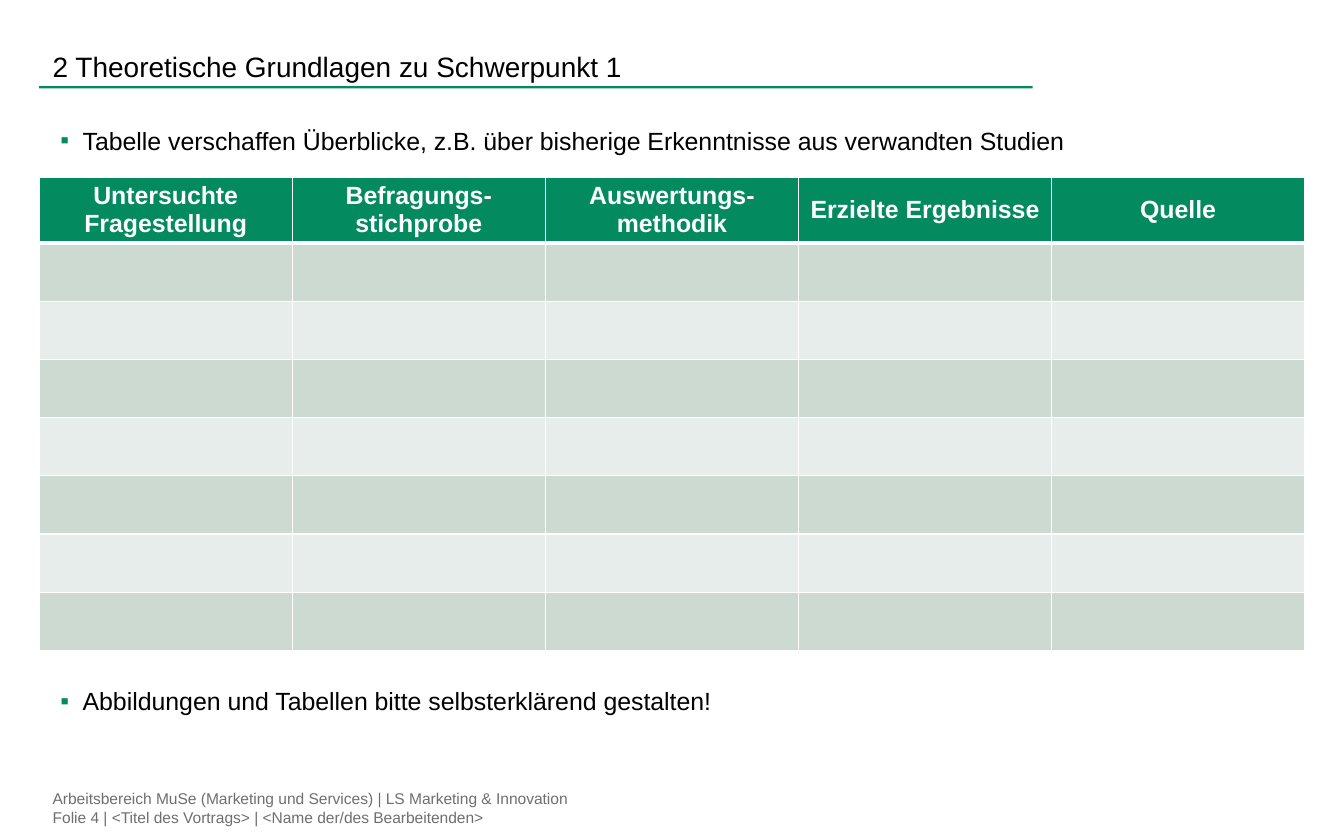
from lxml import etree
from pptx import Presentation
from pptx.dml.color import RGBColor
from pptx.enum.shapes import MSO_SHAPE
from pptx.enum.text import MSO_ANCHOR, MSO_AUTO_SIZE, PP_ALIGN
from pptx.oxml.ns import qn
from pptx.util import Inches, Pt

RECT = MSO_SHAPE.RECTANGLE
TOP, MIDDLE, BOTTOM = MSO_ANCHOR.TOP, MSO_ANCHOR.MIDDLE, MSO_ANCHOR.BOTTOM
LEFT, CENTER = PP_ALIGN.LEFT, PP_ALIGN.CENTER
FIXED = MSO_AUTO_SIZE.NONE
WIDTH, HEIGHT = 12, 7.5
COLS, ROWS = 120, 75
GREEN, WHITE, BLACK, GREY = "038A5E", "FFFFFF", "000000", "6F6F6F"
BANDS = "CCDAD2", "E7EDEA"
EDGE, SPAN = 3.5, 113

HEADS = ["Untersuchte\nFragestellung", "Befragungs-\nstichprobe",
         "Auswertungs-\nmethodik", "Erzielte Ergebnisse", "Quelle"]
POINTS = ["Tabelle verschaffen Überblicke, z.B. über bisherige "
          "Erkenntnisse aus verwandten Studien",
          "Abbildungen und Tabellen bitte selbsterklärend gestalten!"]
FOOTER = ("Arbeitsbereich MuSe (Marketing und Services) | "
          "LS Marketing & Innovation\n"
          "Folie 4 | <Titel des Vortrags> | <Name der/des Bearbeitenden>")


def color(code):
    return RGBColor.from_string(code)


def place(x, y, w, h):
    """Turn grid columns and rows into slide lengths."""
    return (Inches(x * WIDTH / COLS), Inches(y * HEIGHT / ROWS),
            Inches(w * WIDTH / COLS), Inches(h * HEIGHT / ROWS))


def child(parent, tag, **attrs):
    return etree.SubElement(parent, qn(tag), attrs)


class Board:
    """Holds the font and the slide being built."""

    def __init__(self, slide, font="Arial"):
        self.slide, self.font = slide, font

    def label(self, para, text, size, code=BLACK, bold=False, align=LEFT):
        para.text = text
        para.alignment = align
        font = para.font
        font.name, font.size, font.bold = self.font, Pt(size), bold
        font.color.rgb = color(code)

    def frame(self, shape, anchor, sides, top, bottom):
        frame = shape.text_frame
        frame.word_wrap, frame.auto_size = True, FIXED
        frame.vertical_anchor = anchor
        frame.margin_left = frame.margin_right = Inches(sides)
        frame.margin_top, frame.margin_bottom = Inches(top), Inches(bottom)
        return frame

    def title(self, text, *area):
        shape = self.slide.shapes.title
        shape.left, shape.top, shape.width, shape.height = place(*area)
        frame = self.frame(shape, BOTTOM, 0.12, 0.04, 0)
        self.label(frame.paragraphs[0], text, 18)

    def rule(self, *area):
        bar = self.slide.shapes.add_shape(RECT, *place(*area))
        bar.shadow.inherit = False
        bar.fill.solid()
        bar.fill.fore_color.rgb = color(GREEN)
        bar.line.fill.background()

    def note(self, text, *area):
        box = self.slide.shapes.add_textbox(*place(*area))
        frame = self.frame(box, MIDDLE, 0.12, 0.04, 0.04)
        self.label(frame.paragraphs[0], text, 10, GREY)

    def points(self, items, gap, *area):
        box = self.slide.shapes.add_textbox(*place(*area))
        frame = self.frame(box, TOP, 0.1, 0.05, 0.05)
        for i, text in enumerate(items):
            para = frame.add_paragraph() if i else frame.paragraphs[0]
            if i:
                para.space_before = Pt(gap)
            self.bullet(para)
            self.label(para, text, 16)

    def bullet(self, para):
        props = para._p.get_or_add_pPr()
        props.set("marL", str(Inches(0.29)))
        props.set("indent", str(Inches(-0.2)))
        child(child(props, "a:buClr"), "a:srgbClr", val=GREEN)
        child(props, "a:buFont", typeface=self.font)
        child(props, "a:buChar", char="▪")

    def border(self, cell, top, bottom):
        props = cell._tc.get_or_add_tcPr()
        for side, width in zip("LRTB", (1, 1, top, bottom)):
            line = child(props, f"a:ln{side}", w=str(Pt(width)))
            child(child(line, "a:solidFill"), "a:srgbClr", val=WHITE)

    def table(self, heads, bands, head, row, *spot):
        """Draw a header row above empty rows of alternating colour."""
        area = place(*spot, SPAN, head + bands * row)
        grid = self.slide.shapes.add_table(bands + 1, len(heads), *area).table
        grid.horz_banding = False
        for r, line in enumerate(grid.rows):
            line.height = place(0, 0, 0, row if r else head)[3]
            for c, cell in enumerate(line.cells):
                self.border(cell, 3 if r == 1 else 1, 1 if r else 3)
                cell.fill.solid()
                shade = BANDS[(r - 1) % 2] if r else GREEN
                cell.fill.fore_color.rgb = color(shade)
                if not r:
                    cell.vertical_anchor = MIDDLE
                    cell.margin_left = cell.margin_right = Inches(0.08)
                    cell.margin_top = cell.margin_bottom = Inches(0.04)
                    self.label(cell.text_frame.paragraphs[0], heads[c],
                               16, WHITE, True, CENTER)


def main():
    deck = Presentation()
    deck.slide_width, deck.slide_height = Inches(WIDTH), Inches(HEIGHT)
    board = Board(deck.slides.add_slide(deck.slide_layouts[5]))
    board.note(FOOTER, EDGE, 70, 60.9, 4.2)
    board.rule(EDGE, 7.7, 88.7, 0.2)
    board.title("2 Theoretische Grundlagen zu Schwerpunkt 1",
                EDGE, 1, 88.8, 6.4)
    board.points(POINTS, 341, EDGE, 10.7, SPAN, 57.7)
    board.table(HEADS, 7, 5.9, 5.2, EDGE, 15.8)
    deck.save("out.pptx")


if __name__ == "__main__":
    main()
